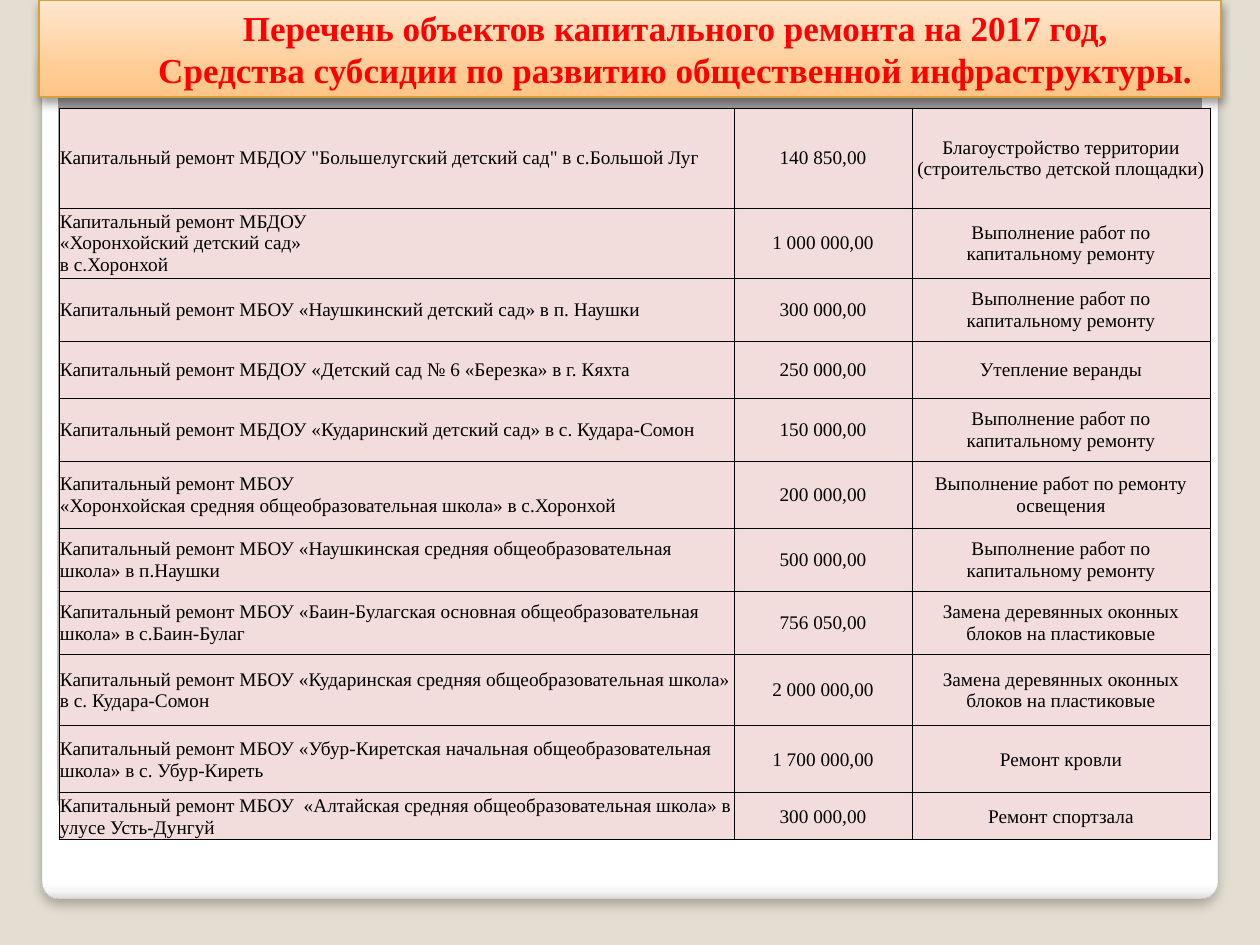
from lxml.etree import SubElement
from pptx import Presentation
from pptx.dml.color import RGBColor
from pptx.enum.shapes import MSO_SHAPE as Shape
from pptx.enum.text import MSO_ANCHOR as Anchor, MSO_AUTO_SIZE as AutoSize, PP_ALIGN as Align
from pptx.oxml.ns import qn
from pptx.util import Pt

PX = 914400 / 126

BEIGE = RGBColor(0xE3, 0xDE, 0xD1)
PINK = RGBColor(0xF2, 0xDD, 0xDC)
RED = RGBColor(0xFF, 0x00, 0x00)
BLACK = RGBColor(0x00, 0x00, 0x00)
WHITE = RGBColor(0xFF, 0xFF, 0xFF)
OFF_WHITE = RGBColor(0xF7, 0xF7, 0xF7)
PALE_GREY = RGBColor(0xDA, 0xDA, 0xDA)
LIGHT_GREY = RGBColor(0xE1, 0xE1, 0xE1)
DARK_GREY = RGBColor(0xA2, 0xA2, 0xA2)
EDGE_GREY = RGBColor(0xA4, 0xA4, 0xA4)
ORANGE = RGBColor(0xFF, 0xC6, 0x87)
SOFT_ORANGE = RGBColor(0xFF, 0xCB, 0x92)
CREAM = RGBColor(0xFF, 0xE7, 0xCF)
OCHRE = RGBColor(0xDB, 0x9E, 0x3F)

TITLE = [
    "Перечень объектов капитального ремонта на 2017 год,",
    "Средства субсидии по развитию общественной инфраструктуры.",
]
REPAIR = "Выполнение работ по капитальному ремонту"
WINDOWS = "Замена деревянных оконных блоков на пластиковые"
# Row height, object after the common prefix, amount, kind of work
PREFIX = "Капитальный ремонт "
OBJECTS = [
    (100, 'МБДОУ "Большелугский детский сад" в с.Большой Луг', "140 850,00",
     "Благоустройство территории (строительство детской площадки)"),
    (70, "МБДОУ\v«Хоронхойский детский сад»\vв с.Хоронхой", "1 000 000,00", REPAIR),
    (63, "МБОУ «Наушкинский детский сад» в п. Наушки", "300 000,00", REPAIR),
    (57, "МБДОУ «Детский сад № 6 «Березка» в г. Кяхта", "250 000,00", "Утепление веранды"),
    (63, "МБДОУ «Кударинский детский сад» в с. Кудара-Сомон", "150 000,00", REPAIR),
    (67, "МБОУ\v«Хоронхойская средняя общеобразовательная школа» в с.Хоронхой",
     "200 000,00", "Выполнение работ по ремонту освещения"),
    (63, "МБОУ «Наушкинская средняя общеобразовательная школа» в п.Наушки",
     "500 000,00", REPAIR),
    (63, "МБОУ «Баин-Булагская основная общеобразовательная школа» в с.Баин-Булаг",
     "756 050,00", WINDOWS),
    (72, "МБОУ «Кударинская средняя общеобразовательная школа» в с. Кудара-Сомон",
     "2 000 000,00", WINDOWS),
    (67, "МБОУ «Убур-Киретская начальная общеобразовательная школа» в с. Убур-Киреть",
     "1 700 000,00", "Ремонт кровли"),
    (47, "МБОУ  «Алтайская средняя общеобразовательная школа» в улусе Усть-Дунгуй",
     "300 000,00", "Ремонт спортзала"),
]
COLUMN_WIDTHS = [675, 178, 298]


def px(length):
    return round(length * PX)


def add_color(parent, color):
    return SubElement(parent, qn("a:srgbClr"), val=str(color))


class SlideBuilder:
    font = "Times New Roman"

    def __init__(self, slide):
        self.slide = slide
        slide.background.fill.solid()
        slide.background.fill.fore_color.rgb = BEIGE

    def gradient(self, shape, stops, angle=None, focus=None):
        """Fill along an angle in degrees, or in circles around a focus (l, t, r, b in percent)."""
        fill = SubElement(shape.element.spPr, qn("a:gradFill"), rotWithShape="1")
        stop_list = SubElement(fill, qn("a:gsLst"))
        for position, color in stops:
            add_color(SubElement(stop_list, qn("a:gs"), pos=str(position * 1000)), color)
        if focus:
            circle = SubElement(fill, qn("a:path"), path="circle")
            SubElement(circle, qn("a:fillToRect"),
                       {side: str(percent * 1000) for side, percent in zip("ltrb", focus)})
        else:
            SubElement(fill, qn("a:lin"), ang=str(angle * 60000), scaled="0")

    def outline(self, shape, color, width):
        shape.line.color.rgb = color
        shape.line.width = Pt(width)

    def shadow(self, shape, opacity, blur, distance):
        shape.shadow.inherit = False
        effects = shape.element.spPr.find(qn("a:effectLst"))
        outer = SubElement(effects, qn("a:outerShdw"), blurRad=str(Pt(blur)),
                           dist=str(Pt(distance)), dir="5400000", algn="t", rotWithShape="0")
        SubElement(add_color(outer, BLACK), qn("a:alpha"), val=str(opacity * 1000))

    def panel(self, left, top, width, height, stops, **direction):
        panel = self.slide.shapes.add_shape(
            Shape.ROUNDED_RECTANGLE, px(left), px(top), px(width), px(height))
        panel.adjustments[0] = 0.02
        self.gradient(panel, stops, **direction)
        panel.line.fill.background()
        panel.shadow.inherit = False
        return panel

    def set_text(self, frame, lines, size, color, align, bold=False):
        frame.word_wrap = True
        frame.text = "\n".join(lines)
        for paragraph in frame.paragraphs:
            paragraph.alignment = align
            for run in paragraph.runs:
                run.font.name = self.font
                run.font.size = Pt(size)
                run.font.bold = bold
                run.font.color.rgb = color

    def title(self, left, top, width, height, lines, first_indent):
        title = self.slide.shapes.title
        title.left, title.top, title.width, title.height = map(px, (left, top, width, height))
        self.slide.shapes.element.append(title.element)  # in front of the panels
        self.gradient(title, [(0, ORANGE), (25, SOFT_ORANGE), (100, CREAM)], angle=270)
        self.outline(title, OCHRE, 0.75)
        self.shadow(title, 40, 5.2, 3)
        frame = title.text_frame
        self.set_text(frame, lines, 20, RED, Align.CENTER, bold=True)
        frame.auto_size = AutoSize.NONE
        frame.vertical_anchor = Anchor.MIDDLE
        frame.paragraphs[0]._p.get_or_add_pPr().set("marL", str(px(first_indent)))

    def cell(self, cell, text, align):
        self.set_text(cell.text_frame, [text], 11, BLACK, align)
        cell.vertical_anchor = Anchor.MIDDLE
        cell.margin_left = cell.margin_right = cell.margin_top = px(1)
        cell.margin_bottom = 0
        properties = cell._tc.get_or_add_tcPr()
        for side in "LRTB":
            border = SubElement(properties, qn(f"a:ln{side}"), w=str(Pt(0.5)))
            add_color(SubElement(border, qn("a:solidFill")), BLACK)
        cell.fill.solid()
        cell.fill.fore_color.rgb = PINK

    def table(self, left, top, widths, heights, rows):
        table = self.slide.shapes.add_table(
            len(rows), len(widths), px(left), px(top), px(sum(widths)), px(sum(heights))).table
        table.first_row = table.horz_banding = False
        for column, width in zip(table.columns, widths):
            column.width = px(width)
        for row, height, texts in zip(table.rows, heights, rows):
            row.height = px(height)
            for index, text in enumerate(texts):
                self.cell(row.cells[index], text, Align.CENTER if index else Align.LEFT)


def main():
    presentation = Presentation()
    presentation.slide_width, presentation.slide_height = px(1260), px(945)
    builder = SlideBuilder(presentation.slides.add_slide(presentation.slide_layouts[5]))

    page = builder.panel(42, 45, 1176, 854, [
        (0, WHITE), (98, WHITE), (99, OFF_WHITE), (100, PALE_GREY)], angle=90)
    builder.outline(page, EDGE_GREY, 0.16)
    builder.shadow(page, 25, 6, 4)
    builder.panel(58, 59, 1144, 756, [
        (0, WHITE), (55, LIGHT_GREY), (100, DARK_GREY)], focus=(50, 175, 50, -75))

    builder.title(39, 0, 1182, 97, TITLE, first_indent=91)
    builder.table(59, 108, COLUMN_WIDTHS, [height for height, *_ in OBJECTS],
                  [(PREFIX + name, amount, work) for _, name, amount, work in OBJECTS])
    presentation.save("out.pptx")


if __name__ == "__main__":
    main()
